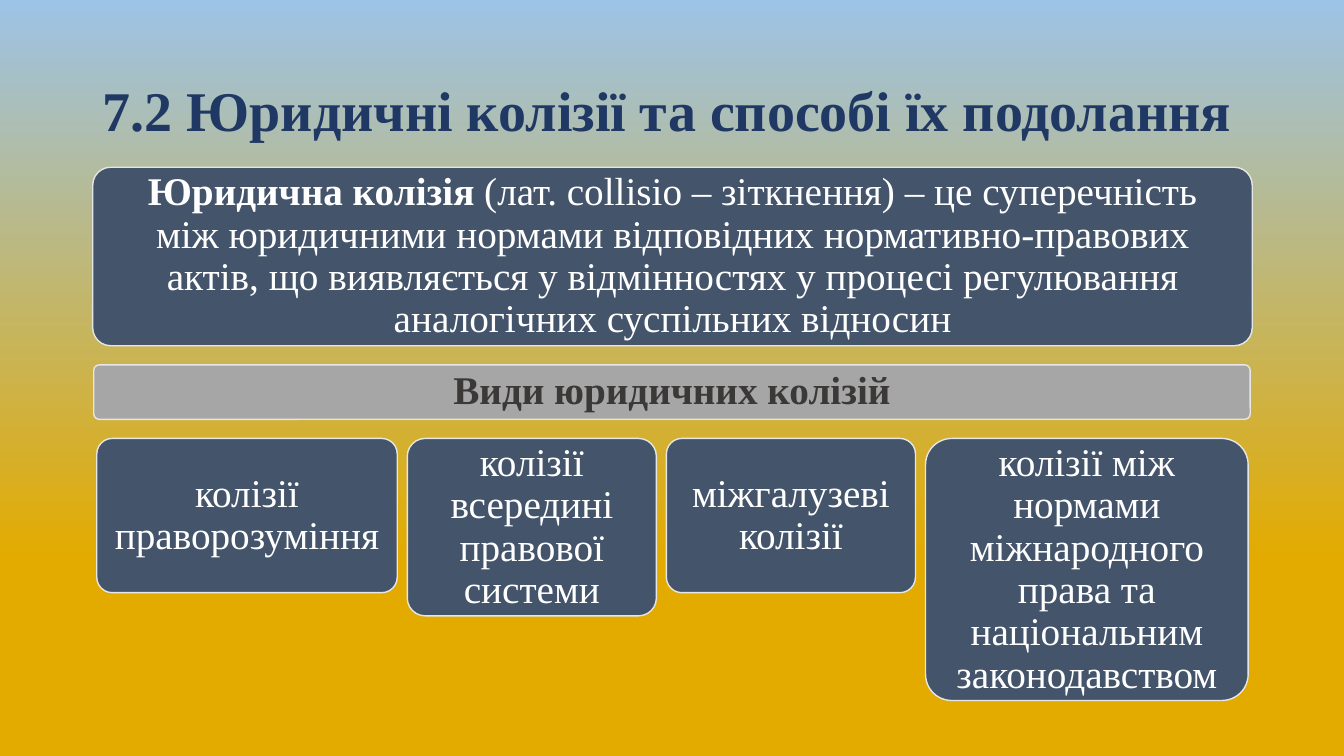
from pptx import Presentation
from pptx.dml.color import RGBColor
from pptx.enum.shapes import MSO_SHAPE
from pptx.enum.text import MSO_ANCHOR, PP_ALIGN
from pptx.util import Inches, Pt

ROUNDED = MSO_SHAPE.ROUNDED_RECTANGLE
MIDDLE = MSO_ANCHOR.MIDDLE
LEFT, CENTER = PP_ALIGN.LEFT, PP_ALIGN.CENTER

NAVY = RGBColor(0x20, 0x38, 0x64)
SLATE = RGBColor(0x44, 0x54, 0x6A)
GREY = RGBColor(0xA6, 0xA6, 0xA6)
DARK = RGBColor(0x3B, 0x38, 0x38)
PALE = RGBColor(0xE7, 0xE6, 0xE6)
WHITE = RGBColor(0xFF, 0xFF, 0xFF)
GOLD = RGBColor(0xE3, 0xAB, 0x00)
SKY = RGBColor(0x9D, 0xC3, 0xE6)


def write(p, text, size=28, color=WHITE, bold=False, align=CENTER):
    p.alignment = align
    p.line_spacing = 0.9
    for i, line in enumerate(text.split("\n")):
        if i:
            p.add_line_break()
        r = p.add_run()
        r.text = line
        r.font.name = "Times New Roman"
        r.font.size = Pt(size)
        r.font.bold = bold
        r.font.color.rgb = color


def add_box(x, y, w, h, fill=SLATE):
    sp = s.shapes.add_shape(ROUNDED, Inches(x), Inches(y), Inches(w), Inches(h))
    sp.adjustments[0] = 0.1
    sp.shadow.inherit = False
    sp.fill.solid()
    sp.fill.fore_color.rgb = fill
    sp.line.color.rgb = PALE
    sp.line.width = Pt(1)
    tf = sp.text_frame
    tf.word_wrap = True
    tf.vertical_anchor = MIDDLE
    tf.margin_left = tf.margin_right = tf.margin_top = tf.margin_bottom = Inches(0.12)
    return tf.paragraphs[0]


prs = Presentation()
prs.slide_width, prs.slide_height = Inches(13.33), Inches(7.5)
s = prs.slides.add_slide(prs.slide_layouts[5])

# Background: gold at the bottom rising to sky blue
bg = s.background.fill
bg.gradient()
bg.gradient_angle = 90
for stop, position, color in zip(bg.gradient_stops, (0.26, 1), (GOLD, SKY)):
    stop.position = position
    stop.color.rgb = color

# Title
title = s.shapes.title
title.left, title.top = Inches(0.92), Inches(0.4)
title.width, title.height = Inches(11.5), Inches(1.45)
title.text_frame.vertical_anchor = MIDDLE
write(title.text_frame.paragraphs[0], "7.2 Юридичні колізії та способі їх подолання",
      size=40, color=NAVY, bold=True, align=LEFT)

# Definition
p = add_box(0.92, 1.66, 11.5, 1.77)
write(p, "Юридична колізія ", bold=True)
write(p, "(лат. соllisio – зіткнення) – це суперечність\n"
         "між юридичними нормами відповідних нормативно-правових актів, "
         "що виявляється у відмінностях у процесі регулювання "
         "аналогічних суспільних відносин")

# Heading of the kinds
p = add_box(0.93, 3.62, 11.47, 0.54, fill=GREY)
write(p, "Види юридичних колізій", color=DARK, bold=True)

# Row of kinds, spaced by an equal gap
GAP = 0.1
KINDS = [
    ("колізії праворозуміння", 2.98, 1.53),
    ("колізії всередині правової системи", 2.47, 1.76),
    ("міжгалузеві колізії", 2.47, 1.53),
    ("колізії між нормами міжнародного права та національним законодавством", 3.2, 2.6),
]
x = 0.96
for text, w, h in KINDS:
    write(add_box(x, 4.35, w, h), text)
    x += w + GAP

prs.save("out.pptx")
